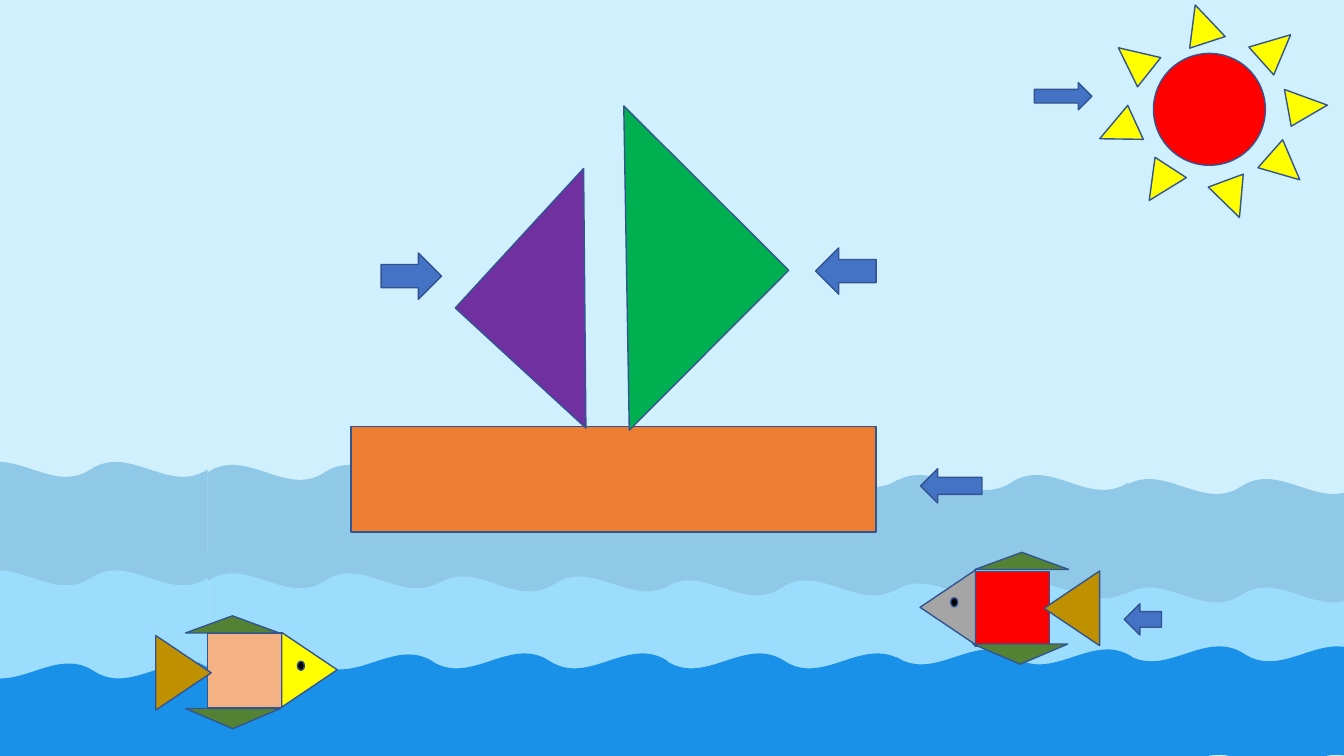
"""Build a slide of a sailing boat at sea with a sun, two fish and arrows."""
import pptx
import pptx.dml.color
import pptx.enum.shapes
import pptx.util
from dataclasses import dataclass

Inches = pptx.util.Inches
MSO = pptx.enum.shapes.MSO_SHAPE


@dataclass(frozen=True)
class Theme:
    sky: str = "CFF0FC"
    wave_light: str = "9CDDFD"
    wave_deep: str = "1991E8"
    wave_far: str = "90C9E8"
    outline: str = "325491"
    outline_pt: float = 1
    red: str = "FF0000"
    yellow: str = "FFFF00"
    hull: str = "ED7D31"
    green: str = "00B050"
    purple: str = "7030A0"
    peach: str = "F4B183"
    gray: str = "A5A5A5"
    fin: str = "548235"
    tail: str = "BF9000"
    eye: str = "000000"
    arrow: str = "4472C4"


theme = Theme()


def rgb(value):
    return pptx.dml.color.RGBColor.from_string(value)


def add_part(shapes, kind, box, fill, flip="", turn=0, outlined=True):
    sp = shapes.add_shape(kind, *[Inches(v) for v in box])
    sp.shadow.inherit = False
    sp.fill.solid()
    sp.fill.fore_color.rgb = rgb(fill)
    if outlined:
        sp.line.color.rgb = rgb(theme.outline)
        sp.line.width = pptx.util.Pt(theme.outline_pt)
    else:
        sp.line.fill.background()
    for axis in flip:
        sp.element.spPr.get_or_add_xfrm().set("flip" + axis.upper(), "1")
    sp.rotation = turn
    return sp


prs = pptx.Presentation()
prs.slide_width, prs.slide_height = Inches(13.33), Inches(7.5)
s = prs.slides.add_slide(prs.slide_layouts[6])
s.background.fill.solid()
s.background.fill.fore_color.rgb = rgb(theme.sky)

wave_rows = [
    (theme.wave_light, "h", (2.32, 1.68),
     [(-0.24, 5.37), (2.08, 5.33), (4.36, 5.29), (6.61, 5.23), (8.89, 5.19), (11.17, 5.14)]),
    (theme.wave_deep, "h", (2.34, 1.23),
     [(-0.24, 6.58), (1.96, 6.49), (4.28, 6.48), (6.61, 6.48), (8.89, 6.44), (11.17, 6.41)]),
    (theme.wave_far, "hv", (2.32, 1.23),
     [(-0.26, 4.58), (2.06, 4.61), (4.34, 4.64), (6.59, 4.68), (8.87, 4.71), (11.15, 4.75)]),
]
for fill, flip, size, places in wave_rows:
    waves = s.shapes.add_group_shape()
    for place in places:
        add_part(waves.shapes, MSO.DOUBLE_WAVE, place + size, fill, flip, outlined=False)

sun = s.shapes.add_group_shape()
add_part(sun.shapes, MSO.OVAL, (11.44, 0.53, 1.11, 1.11), theme.red)
rays = [
    (11.06, 0.4, 308.5, 0.5),
    (12.04, 1.78, 159.7, 0.5),
    (12.56, 1.46, 131.5, 0.5),
    (12.78, 0.84, 79.6, 0.62),
    (12.47, 0.28, 48.2, 0.5),
    (11.73, 0.04, 341.9, 0.5),
    (10.9, 1.1, 245.4, 0.5),
    (11.32, 1.63, 213, 0.5),
]
for left, top, turn, apex in rays:
    ray = add_part(sun.shapes, MSO.ISOSCELES_TRIANGLE, (left, top, 0.37, 0.39), theme.yellow, turn=turn)
    ray.adjustments[0] = apex

boat = s.shapes.add_group_shape()
add_part(boat.shapes, MSO.RECTANGLE, (3.48, 4.23, 5.21, 1.05), theme.hull)
add_part(boat.shapes, MSO.RIGHT_TRIANGLE, (5.06, 1.54, 2.31, 2.24), theme.green, "hv", 44.9)
add_part(boat.shapes, MSO.RIGHT_TRIANGLE, (4.86, 2.08, 1.88, 1.76), theme.purple, "v", 312.6)

fish_parts = [
    (MSO.RECTANGLE, (0.74, 0.74), "", 0),
    (MSO.ISOSCELES_TRIANGLE, (0.74, 0.55), "", 90),
    (MSO.ISOSCELES_TRIANGLE, (0.93, 0.17), "", 0),
    (MSO.ISOSCELES_TRIANGLE, (0.94, 0.2), "v", 0),
    (MSO.ISOSCELES_TRIANGLE, (0.74, 0.55), "", 90),
    (MSO.OVAL, (0.07, 0.09), "", 0),
]
fishes = [
    (theme.peach, theme.yellow, "", 1,
     [(2.06, 6.28), (2.7, 6.37), (1.84, 6.11), (1.84, 7.03), (1.45, 6.4), (2.95, 6.56)]),
    (theme.red, theme.gray, "h", -1,
     [(9.67, 5.67), (9.03, 5.75), (9.67, 5.48), (9.65, 6.39), (10.26, 5.76), (9.43, 5.93)]),
]
for body, head, mirror, direction, places in fishes:
    fish = s.shapes.add_group_shape()
    fills = [body, head, theme.fin, theme.fin, theme.tail, theme.eye]
    for (kind, size, flip, turn), place, fill in zip(fish_parts, places, fills):
        add_part(fish.shapes, kind, place + size, fill, mirror + flip, direction * turn)

arrows = [
    (MSO.RIGHT_ARROW, (9.13, 4.65, 0.61, 0.34), "h", 0),
    (MSO.RIGHT_ARROW, (8.09, 2.46, 0.6, 0.46), "h", 0),
    (MSO.RIGHT_ARROW, (3.78, 2.51, 0.6, 0.46), "", 0),
    (MSO.DOWN_ARROW, (11.18, 5.96, 0.31, 0.37), "", 90),
    (MSO.RIGHT_ARROW, (10.26, 0.82, 0.57, 0.27), "", 0),
]
for kind, box, flip, turn in arrows:
    add_part(s.shapes, kind, box, theme.arrow, flip, turn)

prs.save("out.pptx")
